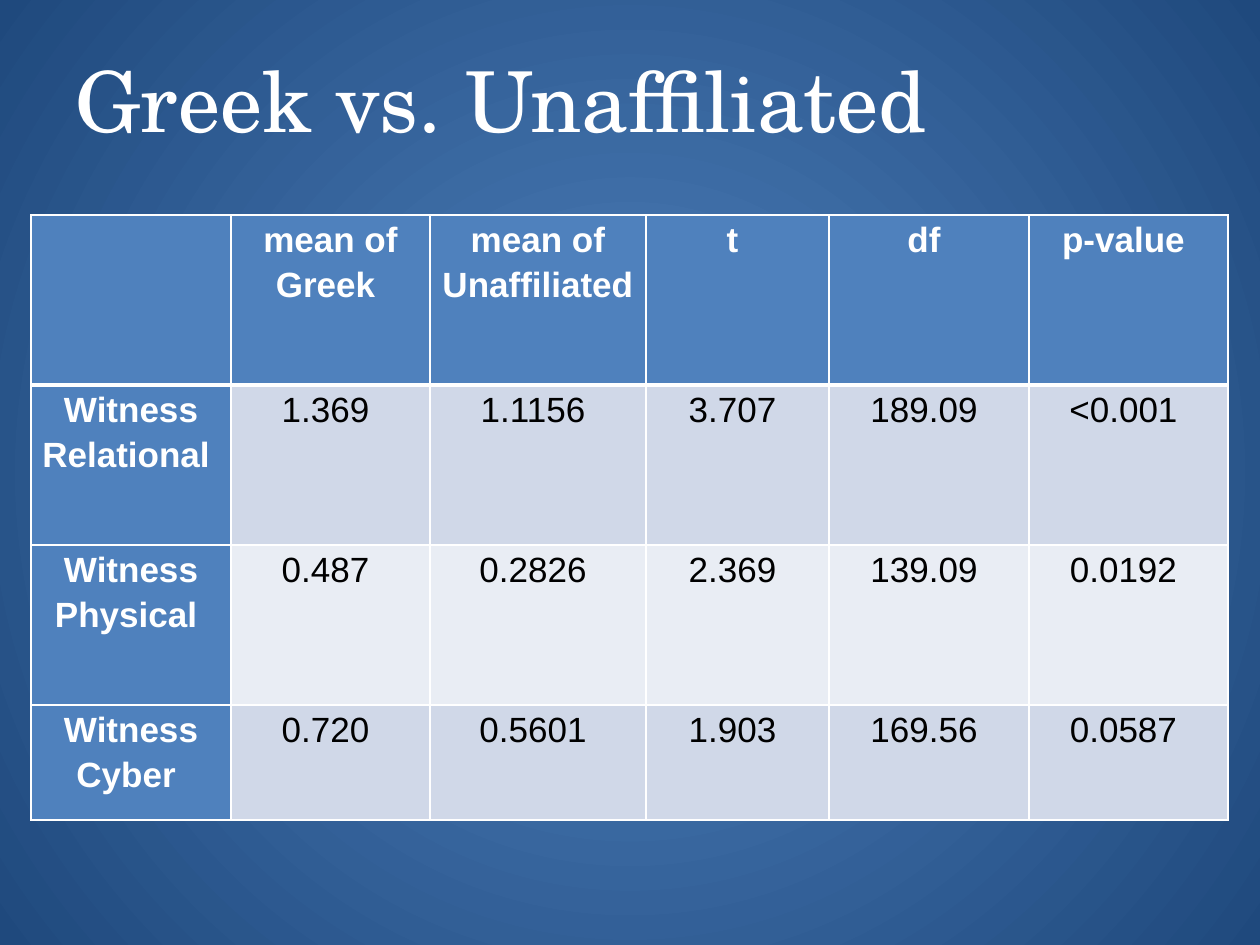
"""Build the slide comparing Greek and unaffiliated witness means in a table."""
import dataclasses

import lxml.etree
import pptx
import pptx.dml.color
import pptx.enum.text
import pptx.oxml
import pptx.oxml.ns
import pptx.util

RGBColor = pptx.dml.color.RGBColor
WHITE = RGBColor(0xFF, 0xFF, 0xFF)
BLACK = RGBColor(0x00, 0x00, 0x00)
BLUE = RGBColor(0x4F, 0x81, 0xBD)
NAVY = RGBColor(0x1F, 0x49, 0x7D)
DARK_BAND = RGBColor(0xD0, 0xD8, 0xE8)
LIGHT_BAND = RGBColor(0xE9, 0xED, 0xF4)

PX_PER_INCH = 126
SLIDE_SIZE = (1260, 945)
TITLE_BOX = (63, 42, 1134, 157)
TABLE_ORIGIN = (31, 215)
COLUMN_WIDTHS = (200, 199, 216, 183, 200, 199)
CELL_MARGIN = 9


@dataclasses.dataclass(frozen=True)
class ResultRow:
    height: int
    texts: tuple[str, ...]
    band: RGBColor
    bottom_rule: int = 1


RESULT_ROWS = (
    ResultRow(170, ("", "mean of\nGreek ", "mean of\nUnaffiliated ", "t ", "df ", "p-value "), BLUE, 3),
    ResultRow(160, ("Witness Relational ", "1.369 ", "1.1156 ", "3.707 ", "189.09 ", "<0.001 "), DARK_BAND),
    ResultRow(160, ("Witness Physical ", "0.487 ", "0.2826 ", "2.369 ", "139.09 ", "0.0192 "), LIGHT_BAND),
    ResultRow(115, ("Witness Cyber ", "0.720 ", "0.5601 ", "1.903 ", "169.56 ", "0.0587 "), DARK_BAND),
)


def px(length: int) -> pptx.util.Emu:
    """Turn whole pixels into EMU."""
    return pptx.util.Emu(round(length * 914400 / PX_PER_INCH))


def paint_background(slide) -> None:
    """Give the slide a circular gradient from its centre."""
    slide.background.fill.gradient()
    gradient = slide.background.fill._xPr.find(pptx.oxml.ns.qn("a:gradFill"))
    replacement = pptx.oxml.parse_xml(
        f'<a:gradFill {pptx.oxml.ns.nsdecls("a")} rotWithShape="1"><a:gsLst>'
        f'<a:gs pos="0"><a:srgbClr val="{BLUE}"/></a:gs>'
        f'<a:gs pos="100000"><a:srgbClr val="{NAVY}"/></a:gs></a:gsLst>'
        '<a:path path="circle"><a:fillToRect l="50000" t="50000" r="50000" b="50000"/></a:path>'
        '</a:gradFill>')
    gradient.getparent().replace(gradient, replacement)


def write_title(slide, text: str) -> None:
    """Place and format the title."""
    title = slide.shapes.title
    title.left, title.top, title.width, title.height = map(px, TITLE_BOX)
    frame = title.text_frame
    frame.text = text
    frame.vertical_anchor = pptx.enum.text.MSO_ANCHOR.TOP
    paragraph = frame.paragraphs[0]
    paragraph.alignment = pptx.enum.text.PP_ALIGN.LEFT
    font = paragraph.runs[0].font
    font.name, font.size, font.color.rgb = "TeX Gyre Schola", pptx.util.Pt(48), WHITE


def draw_borders(cell, rules: dict[str, int]) -> None:
    """Draw white cell borders with widths in points."""
    properties = cell._tc.get_or_add_tcPr()
    for position, (side, width) in enumerate(rules.items()):
        line = lxml.etree.Element(pptx.oxml.ns.qn(f"a:ln{side}"), w=str(pptx.util.Pt(width)))
        fill = lxml.etree.SubElement(line, pptx.oxml.ns.qn("a:solidFill"))
        lxml.etree.SubElement(fill, pptx.oxml.ns.qn("a:srgbClr"), val=str(WHITE))
        properties.insert(position, line)


def fill_cell(cell, text: str, band: RGBColor, heading: bool) -> None:
    """Write a cell and format its text and fill."""
    cell.fill.solid()
    cell.fill.fore_color.rgb = BLUE if heading else band
    cell.margin_left = cell.margin_right = px(CELL_MARGIN)
    cell.margin_top = cell.margin_bottom = 0
    cell.text_frame.text = text
    for paragraph in cell.text_frame.paragraphs:
        paragraph.alignment = pptx.enum.text.PP_ALIGN.CENTER
        paragraph.line_spacing = 1.15
        font = paragraph.font
        for run in paragraph.runs:
            font = run.font
            font.name, font.size, font.bold = "Arial", pptx.util.Pt(20), heading
            font.color.rgb = WHITE if heading else BLACK


def add_results(slide, rows: tuple[ResultRow, ...]) -> None:
    """Add the table of test results."""
    size = (sum(COLUMN_WIDTHS), sum(row.height for row in rows))
    results = slide.shapes.add_table(
        len(rows), len(COLUMN_WIDTHS), *map(px, TABLE_ORIGIN + size)).table
    results.first_col = True
    for column, width in zip(results.columns, COLUMN_WIDTHS):
        column.width = px(width)
    top_rule = 1
    for row_index, row in enumerate(rows):
        results.rows[row_index].height = px(row.height)
        for column_index, text in enumerate(row.texts):
            cell = results.cell(row_index, column_index)
            fill_cell(cell, text, row.band, row_index == 0 or column_index == 0)
            draw_borders(cell, {"L": 1, "R": 1, "T": top_rule, "B": row.bottom_rule})
        top_rule = row.bottom_rule


def main() -> None:
    """Build and save the presentation."""
    presentation = pptx.Presentation()
    presentation.slide_width, presentation.slide_height = map(px, SLIDE_SIZE)
    slide = presentation.slides.add_slide(presentation.slide_layouts[5])
    paint_background(slide)
    write_title(slide, "Greek vs. Unaffiliated")
    add_results(slide, RESULT_ROWS)
    presentation.save("out.pptx")


if __name__ == "__main__":
    main()
